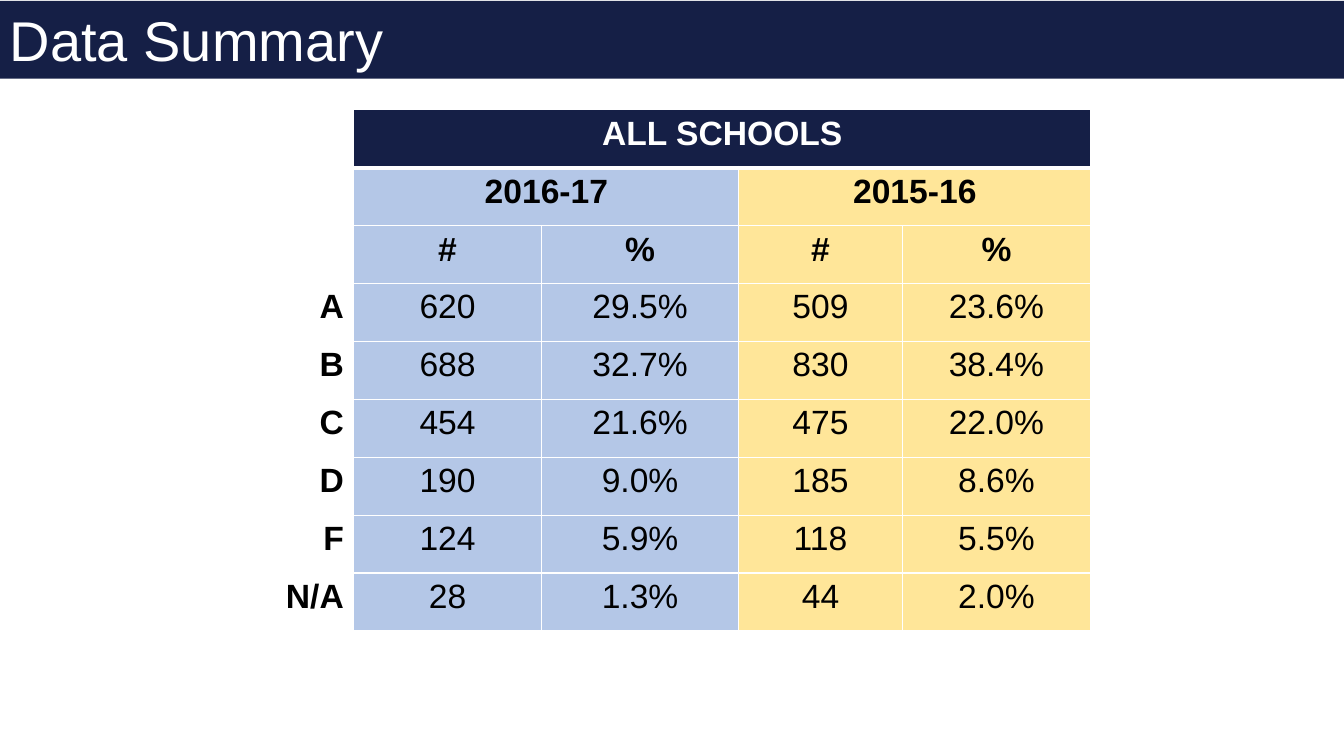
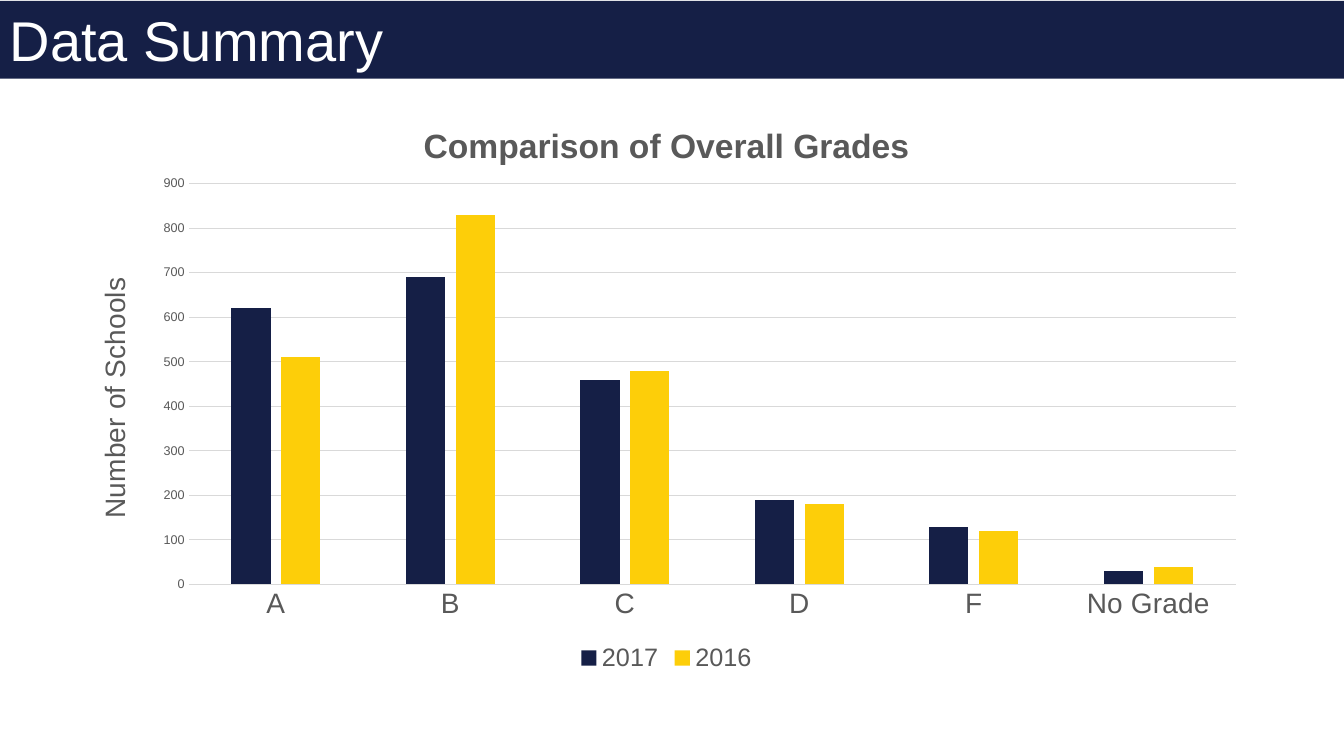
from dataclasses import dataclass

from lxml import etree
from pptx import Presentation
from pptx.chart.data import CategoryChartData
from pptx.dml.color import RGBColor
from pptx.enum.chart import XL_CHART_TYPE, XL_LEGEND_POSITION, XL_TICK_MARK
from pptx.enum.text import MSO_AUTO_SIZE, PP_ALIGN
from pptx.oxml.ns import qn
from pptx.util import Inches, Pt

COLUMNS = XL_CHART_TYPE.COLUMN_CLUSTERED
BOTTOM = XL_LEGEND_POSITION.BOTTOM
NO_TICK = XL_TICK_MARK.NONE
GROW = MSO_AUTO_SIZE.SHAPE_TO_FIT_TEXT
CENTER = PP_ALIGN.CENTER
RIGHT = PP_ALIGN.RIGHT

FONT = "Arial"
COLORS = {
    "navy": "151F46",
    "gold": "FDCE09",
    "blue": "B4C7E7",
    "cream": "FFE699",
    "white": "FFFFFF",
    "black": "000000",
    "gray": "595959",
    "rule": "D9D9D9",
}
WIDTH = Inches(13.33)
HEIGHT = Inches(7.5)


@dataclass
class Area:
    """Percentages of the slide's width and height."""

    left: float
    top: float
    width: float
    height: float

    def lengths(self):
        return across(self.left), down(self.top), across(self.width), down(self.height)


@dataclass
class YearGroup:
    label: str
    fill: str
    counts: list[int]
    percents: list[str]


@dataclass
class BarSeries:
    name: str
    color: str
    values: list[int]


TITLE_AREA = Area(0, 0.13, 100, 10.27)
TABLE_AREA = Area(16.88, 14.53, 64.28, 68.94)
CHART_AREA = Area(5.48, 13.33, 88.22, 76.27)
PLOT_SHARES = {"x": 0.097, "y": 0.144, "w": 0.883, "h": 0.695}
COLUMN_SHARES = [9.45, 13.95, 14.7, 12.15, 14.03]
HEADING_ROWS = 3

GRADES = ["A", "B", "C", "D", "F", "N/A"]
YEARS = [
    YearGroup("2016-17", "blue", [620, 688, 454, 190, 124, 28],
              ["29.5%", "32.7%", "21.6%", "9.0%", "5.9%", "1.3%"]),
    YearGroup("2015-16", "cream", [509, 830, 475, 185, 118, 44],
              ["23.6%", "38.4%", "22.0%", "8.6%", "5.5%", "2.0%"]),
]
BAR_LABELS = GRADES[:-1] + ["No Grade"]
BARS = [
    BarSeries("2017", "navy", [620, 690, 460, 190, 130, 30]),
    BarSeries("2016", "gold", [510, 830, 480, 180, 120, 40]),
]


def across(share: float) -> int:
    return round(WIDTH * share / 100)


def down(share: float) -> int:
    return round(HEIGHT * share / 100)


def color(name: str) -> RGBColor:
    return RGBColor.from_string(COLORS[name])


def style_font(font, size: float, name: str, bold: bool = False) -> None:
    font.name = FONT
    font.size = Pt(size)
    font.bold = bold
    font.color.rgb = color(name)


def style_line(line, name: str) -> None:
    line.color.rgb = color(name)
    line.width = Pt(0.75)


def add_titled_slide(deck, title: str):
    page = deck.slides.add_slide(deck.slide_layouts[6])
    box = page.shapes.add_textbox(*TITLE_AREA.lengths())
    box.fill.solid()
    box.fill.fore_color.rgb = color("navy")
    frame = box.text_frame
    frame.word_wrap = True
    frame.auto_size = GROW
    frame.text = title
    style_font(frame.paragraphs[0].runs[0].font, 40, "white")
    return page


def add_borders(cell, top: float, bottom: float) -> None:
    properties = cell._tc.get_or_add_tcPr()
    for side, points in {"L": 1, "R": 1, "T": top, "B": bottom}.items():
        line = etree.SubElement(properties, qn(f"a:ln{side}"), w=str(Pt(points)))
        fill = etree.SubElement(line, qn("a:solidFill"))
        etree.SubElement(fill, qn("a:srgbClr"), val=COLORS["white"])


def fill_cell(cell, text: str, fill: str, align, bold: bool) -> None:
    if fill:
        cell.fill.solid()
        cell.fill.fore_color.rgb = color(fill)
    else:
        cell.fill.background()
    if text:
        cell.text_frame.text = text
        para = cell.text_frame.paragraphs[0]
        para.alignment = align
        style_font(para.runs[0].font, 24, "white" if fill == "navy" else "black", bold)


def add_grade_table(page) -> None:
    row_count = HEADING_ROWS + len(GRADES)
    frame = page.shapes.add_table(row_count, len(COLUMN_SHARES), *TABLE_AREA.lengths())
    table = frame.table
    table.first_row = False
    table.horz_banding = False
    for column, share in zip(table.columns, COLUMN_SHARES):
        column.width = across(share)
    for index, row in enumerate(table.rows):
        row.height = down(TABLE_AREA.height / row_count)
        for cell in row.cells:
            add_borders(cell, 3 if index == 1 else 1, 3 if index == 0 else 1)

    for index, label in enumerate([""] * HEADING_ROWS + GRADES):
        fill_cell(table.cell(index, 0), label, "", RIGHT, True)
    table.cell(0, 1).merge(table.cell(0, len(COLUMN_SHARES) - 1))
    fill_cell(table.cell(0, 1), "ALL SCHOOLS", "navy", CENTER, True)
    for group, year in enumerate(YEARS):
        first = 1 + 2 * group
        table.cell(1, first).merge(table.cell(1, first + 1))
        fill_cell(table.cell(1, first), year.label, year.fill, CENTER, True)
        for offset, values in enumerate([["#", *year.counts], ["%", *year.percents]]):
            for index, value in enumerate(values):
                cell = table.cell(HEADING_ROWS - 1 + index, first + offset)
                fill_cell(cell, str(value), year.fill, CENTER, index == 0)


def set_title(title, text: str, size: float, bold: bool) -> None:
    title.text_frame.text = text
    style_font(title.text_frame.paragraphs[0].runs[0].font, size, "gray", bold)


def place_plot(chart) -> None:
    plot_area = chart._chartSpace.find(".//" + qn("c:plotArea"))
    for old in plot_area.findall(qn("c:layout")):
        plot_area.remove(old)
    layout = etree.Element(qn("c:layout"))
    plot_area.insert(0, layout)
    manual = etree.SubElement(layout, qn("c:manualLayout"))
    settings = {"layoutTarget": "inner", "xMode": "edge", "yMode": "edge", **PLOT_SHARES}
    for tag, value in settings.items():
        etree.SubElement(manual, qn(f"c:{tag}"), val=str(value))


def add_grade_chart(page) -> None:
    data = CategoryChartData()
    data.categories = BAR_LABELS
    for bar in BARS:
        data.add_series(bar.name, bar.values)
    chart = page.shapes.add_chart(COLUMNS, *CHART_AREA.lengths(), data).chart
    style_font(chart.font, 10, "black")
    chart.has_title = True
    set_title(chart.chart_title, "Comparison of Overall Grades", 24, True)
    chart.chart_title.include_in_layout = False
    chart.has_legend = True
    chart.legend.position = BOTTOM
    chart.legend.include_in_layout = False
    style_font(chart.legend.font, 18, "gray")

    plot = chart.plots[0]
    plot.gap_width = 219
    plot.overlap = -27
    plot.vary_by_categories = False
    for series, bar in zip(plot.series, BARS):
        series.format.fill.solid()
        series.format.fill.fore_color.rgb = color(bar.color)

    for axis, size in ((chart.category_axis, 20), (chart.value_axis, 9)):
        axis.major_tick_mark = NO_TICK
        axis.minor_tick_mark = NO_TICK
        style_font(axis.tick_labels.font, size, "gray")
    style_line(chart.category_axis.format.line, "rule")
    values = chart.value_axis
    values.minimum_scale = 0
    values.maximum_scale = 900
    values.major_unit = 100
    values.format.line.fill.background()
    values.has_major_gridlines = True
    style_line(values.major_gridlines.format.line, "rule")
    set_title(values.axis_title, "Number of Schools", 20, False)
    body = values.axis_title._element.find(".//" + qn("a:bodyPr"))
    body.set("rot", "-5400000")
    body.set("vert", "horz")
    place_plot(chart)


def main() -> None:
    deck = Presentation()
    deck.slide_width = WIDTH
    deck.slide_height = HEIGHT
    for add_content in (add_grade_table, add_grade_chart):
        add_content(add_titled_slide(deck, "Data Summary"))
    deck.save("out.pptx")


if __name__ == "__main__":
    main()
